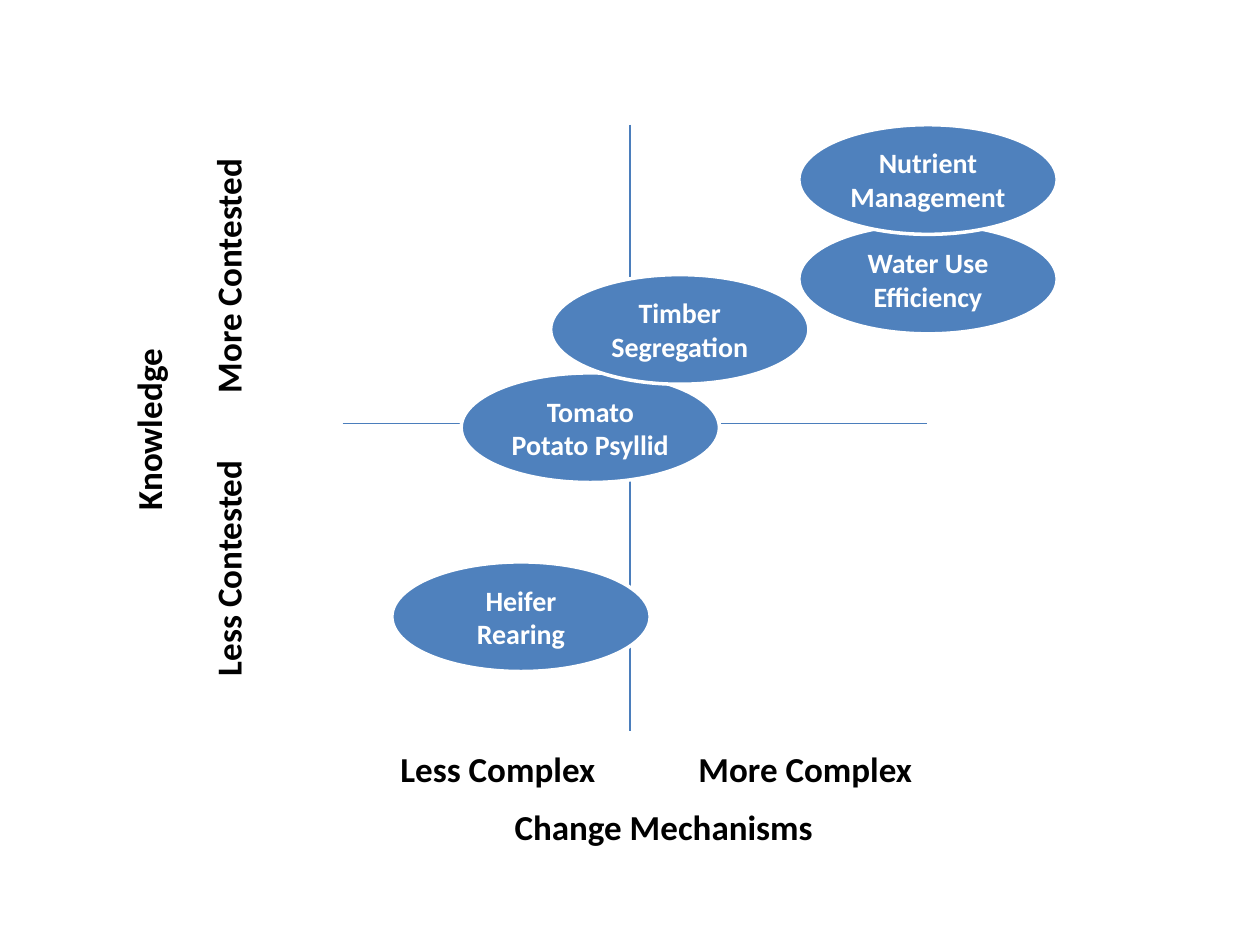
from pptx import Presentation
from pptx.dml.color import RGBColor
from pptx.enum.shapes import MSO_CONNECTOR, MSO_SHAPE
from pptx.enum.text import MSO_ANCHOR, PP_ALIGN
from pptx.oxml.ns import qn
from pptx.util import Inches, Pt
from lxml.etree import SubElement

FONT = "Calibri"
COLORS = {"axis": "4B7EBC", "bubble": "4F81BD", "light": "FFFFFF", "text": "000000"}

# from x, from y, to x, to y
AXES = [(5, 0.99, 5, 5.8), (2.72, 3.36, 7.36, 3.36)]

# text, centre x, centre y, width, rotation
LABELS = [
    ("Knowledge", 1.18, 3.4, 1.5, 270),
    ("Less Contested", 1.81, 4.5, 1.93, 270),
    ("More Contested", 1.81, 2.18, 2.08, 270),
    ("Change Mechanisms", 5.28, 6.56, 2.59, 0),
    ("Less Complex", 3.96, 6.1, 1.76, 0),
    ("More Complex", 6.4, 6.1, 1.91, 0),
]
LABEL_H = 0.44

# paragraphs, left, top; later projects overlap earlier ones
PROJECTS = [
    (["Heifer", "Rearing"], 3.11, 4.46),
    (["Tomato Potato Psyllid"], 3.66, 2.96),
    (["Water Use Efficiency"], 6.34, 1.78),
    (["Timber Segregation"], 4.37, 2.18),
    (["Nutrient", "Management"], 6.34, 0.99),
]
BUBBLE_W, BUBBLE_H = 2.05, 0.87


def rgb(name):
    return RGBColor.from_string(COLORS[name])


def write(tf, lines, size, color, align):
    tf.text = "\n".join(lines)
    for p in tf.paragraphs:
        p.alignment = align
        p.font.name = FONT
        p.font.size = Pt(size)
        p.font.bold = True
        p.font.color.rgb = rgb(color)


def add_axis(s, *ends):
    line = s.shapes.add_connector(MSO_CONNECTOR.STRAIGHT, *map(Inches, ends))
    line.line.color.rgb = rgb("axis")
    line.line.width = Pt(0.75)
    SubElement(line._element.spPr, qn("a:effectLst"))


def add_label(s, text, cx, cy, width, rotation):
    sp = s.shapes.add_textbox(Inches(cx - width / 2), Inches(cy - LABEL_H / 2),
                              Inches(width), Inches(LABEL_H))
    sp.rotation = rotation
    sp.text_frame.word_wrap = False
    write(sp.text_frame, [text], 20, "text", PP_ALIGN.LEFT)


def add_bubble(s, lines, left, top):
    sp = s.shapes.add_shape(MSO_SHAPE.OVAL, Inches(left), Inches(top),
                            Inches(BUBBLE_W), Inches(BUBBLE_H))
    sp.shadow.inherit = False
    sp.fill.solid()
    sp.fill.fore_color.rgb = rgb("bubble")
    sp.line.color.rgb = rgb("light")
    sp.line.width = Pt(2)
    tf = sp.text_frame
    tf.word_wrap = True
    tf.vertical_anchor = MSO_ANCHOR.MIDDLE
    write(tf, lines, 16, "light", PP_ALIGN.CENTER)


def main():
    prs = Presentation()
    prs.slide_width, prs.slide_height = Inches(10), Inches(7.5)
    s = prs.slides.add_slide(prs.slide_layouts[6])
    for label in LABELS:
        add_label(s, *label)
    for axis in AXES:
        add_axis(s, *axis)
    for project in PROJECTS:
        add_bubble(s, *project)
    prs.save("out.pptx")


if __name__ == "__main__":
    main()
